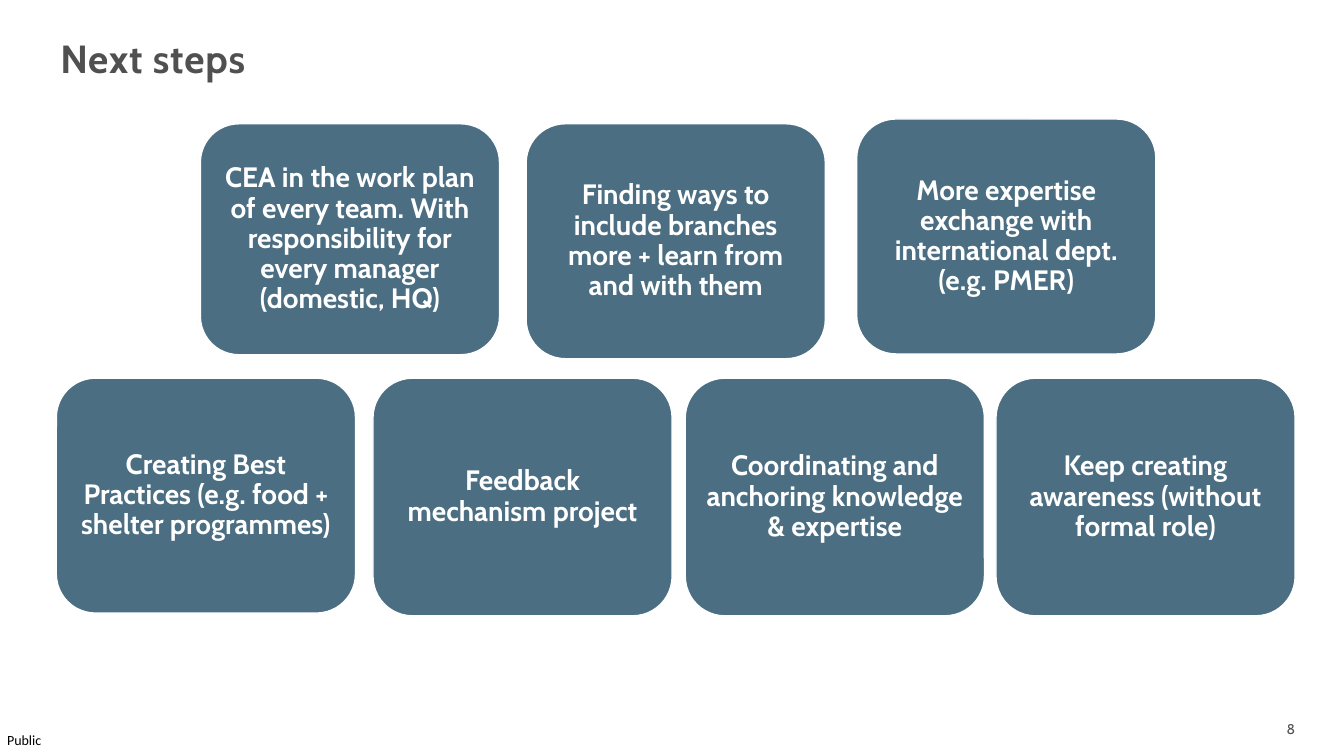
from pptx import Presentation
from pptx.dml.color import RGBColor
from pptx.enum.shapes import MSO_SHAPE as Preset
from pptx.enum.text import MSO_ANCHOR as Anchor, MSO_AUTO_SIZE as AutoSize, PP_ALIGN as Align
from pptx.util import Cm, Pt

WHITE = RGBColor(0xFF, 0xFF, 0xFF)
BLACK = RGBColor(0x00, 0x00, 0x00)
GREY = RGBColor(0x50, 0x50, 0x50)
STEEL = RGBColor(0x4B, 0x6E, 0x82)

CARD_WIDTH = 7.54
STEPS = [
    (5.05, 3.12, 5.82, "CEA in the work plan of every team. With responsibility "
                       "for every manager (domestic, HQ)"),
    (13.26, 3.12, 5.92, "Finding ways to include branches more + learn from and with them"),
    (21.59, 3.0, 5.92, "More expertise exchange with international dept. (e.g. PMER)"),
    (1.42, 9.53, 5.92, "Creating Best Practices (e.g. food + shelter programmes)"),
    (9.4, 9.53, 5.99, "Feedback mechanism project"),
    (17.27, 9.53, 5.99, "Coordinating and anchoring knowledge & expertise"),
    (25.1, 9.53, 5.99, "Keep creating awareness (without formal role)"),
]


def write_text(shape, text, size, color, font="Cabin", bold=False, align=Align.LEFT,
               anchor=Anchor.TOP, insets=(0, 0, 0, 0), line_spacing=1.0,
               letter_spacing=0, wrap=True):
    """Fill a shape with one formatted paragraph."""
    frame = shape.text_frame
    frame.auto_size = AutoSize.NONE
    frame.word_wrap = wrap
    frame.vertical_anchor = anchor
    (frame.margin_left, frame.margin_top,
     frame.margin_right, frame.margin_bottom) = [Cm(inset) for inset in insets]
    paragraph = frame.paragraphs[0]
    paragraph.alignment = align
    paragraph.line_spacing = line_spacing
    run = paragraph.add_run()
    run.text = text
    run.font.name = font
    run.font.size = Pt(size)
    run.font.bold = bold
    run.font.color.rgb = color
    if letter_spacing:
        run._r.get_or_add_rPr().set("spc", str(letter_spacing))


def place_title(slide, text):
    """Move the title placeholder and write the heading."""
    title = slide.shapes.title
    title.left, title.top, title.width, title.height = Cm(1.42), Cm(0.91), Cm(31.19), Cm(1.85)
    write_text(title, text, 28, GREY, bold=True, insets=(0.1,) * 4,
               line_spacing=0.9, letter_spacing=60)


def add_label(slide, left, top, width, height, text, color, **text_format):
    """Add a small text box."""
    label = slide.shapes.add_textbox(Cm(left), Cm(top), Cm(width), Cm(height))
    write_text(label, text, 10, color, **text_format)


def add_step(slide, left, top, height, text):
    """Add one rounded card with centred text."""
    card = slide.shapes.add_shape(Preset.ROUNDED_RECTANGLE, Cm(left), Cm(top),
                                  Cm(CARD_WIDTH), Cm(height))
    card.shadow.inherit = False
    card.fill.solid()
    card.fill.fore_color.rgb = STEEL
    card.line.color.rgb = WHITE
    card.line.width = Pt(1)
    write_text(card, text, 20, WHITE, bold=True, align=Align.CENTER,
               anchor=Anchor.MIDDLE, insets=(0.2,) * 4, line_spacing=0.9)


def main():
    """Build the slide and save it."""
    presentation = Presentation()
    presentation.slide_width, presentation.slide_height = Cm(33.87), Cm(19.05)
    slide = presentation.slides.add_slide(presentation.slide_layouts.get_by_name("Title Only"))
    place_title(slide, "Next steps")
    for left, top, height, text in STEPS:
        add_step(slide, left, top, height, text)
    add_label(slide, 0.18, 18.44, 0.94, 0.43, "Public", BLACK, font="Calibri", wrap=False)
    add_label(slide, 31.19, 18.06, 1.45, 0.61, "8", GREY, align=Align.RIGHT,
              anchor=Anchor.BOTTOM, insets=(0.1, 0.1, 0, 0.1))
    presentation.save("out.pptx")


if __name__ == "__main__":
    main()
